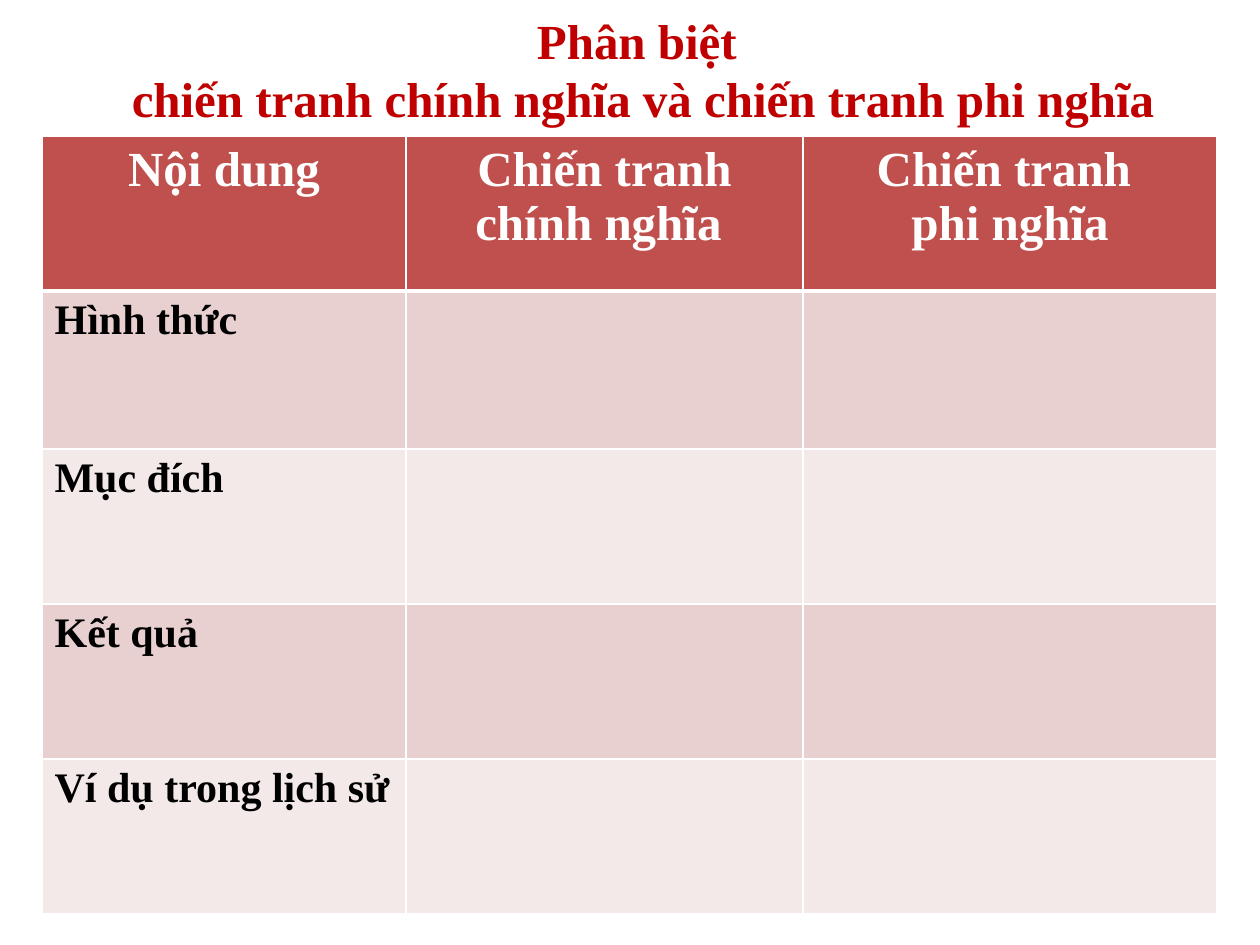
from lxml.etree import SubElement
from pptx import Presentation
from pptx.dml.color import RGBColor
from pptx.enum.text import MSO_ANCHOR, MSO_AUTO_SIZE, PP_ALIGN
from pptx.oxml.ns import qn
from pptx.util import Emu, Pt

COLORS = {
    "title": "C00000",
    "header": "C0504D",
    "odd": "E8D0D0",
    "even": "F4E9E9",
    "white": "FFFFFF",
    "black": "000000",
}
COLUMN_WIDTHS = [364, 397, 414]
ROW_HEIGHTS = [155, 158, 155, 155, 155]
HEADINGS = [["Nội dung"], ["Chiến tranh chính nghĩa "], ["Chiến tranh ", "phi nghĩa"]]
TOPICS = ["Hình thức", "Mục đích", "Kết quả", "Ví dụ trong lịch sử"]


def px(length):
    return Emu(round(length * 914400 / 126))


class SlideBuilder:
    font_name = "Times New Roman"

    def __init__(self, page):
        self.page = page

    def span(self, para, text, size, color):
        span = para.add_run()
        span.text = text
        span.font.name = self.font_name
        span.font.size = Pt(size)
        span.font.bold = True
        span.font.color.rgb = RGBColor.from_string(COLORS[color])

    def title(self, lines, left, top, width, height):
        box = self.page.shapes.title
        box.left, box.top, box.width, box.height = map(px, (left, top, width, height))
        frame = box.text_frame
        frame.auto_size = MSO_AUTO_SIZE.NONE
        frame.word_wrap = True
        frame.vertical_anchor = MSO_ANCHOR.TOP
        frame.margin_top = 0
        para = frame.paragraphs[0]
        para.alignment = PP_ALIGN.CENTER
        for index, line in enumerate(lines):
            if index:
                para.add_line_break()
            self.span(para, line, 28, "title")

    def table(self, left, top, widths, heights):
        frame = self.page.shapes.add_table(
            len(heights), len(widths), px(left), px(top), px(sum(widths)), px(sum(heights))
        )
        table = frame.table
        for column, width in zip(table.columns, widths):
            column.width = px(width)
        for row, height in zip(table.rows, heights):
            row.height = px(height)
        return table

    def cell(self, cell, fill, top_line=1, bottom_line=1):
        properties = cell._tc.get_or_add_tcPr()
        for side, points in zip("LRTB", (1, 1, top_line, bottom_line)):
            line = SubElement(properties, qn(f"a:ln{side}"), w=str(Pt(points)))
            paint = SubElement(line, qn("a:solidFill"))
            SubElement(paint, qn("a:srgbClr"), val=COLORS["white"])
        cell.fill.solid()
        cell.fill.fore_color.rgb = RGBColor.from_string(COLORS[fill])

    def cell_text(self, cell, lines, size, color, alignment):
        frame = cell.text_frame
        for index, line in enumerate(lines):
            para = frame.add_paragraph() if index else frame.paragraphs[0]
            para.alignment = alignment
            self.span(para, line, size, color)


def main():
    deck = Presentation()
    deck.slide_width, deck.slide_height = px(1260), px(945)
    builder = SlideBuilder(deck.slides.add_slide(deck.slide_layouts[5]))
    builder.title(
        ["Phân biệt ", "chiến tranh chính nghĩa và chiến tranh phi nghĩa"], 2, 10, 1282, 157
    )
    table = builder.table(42, 136, COLUMN_WIDTHS, ROW_HEIGHTS)
    for column, lines in enumerate(HEADINGS):
        cell = table.cell(0, column)
        builder.cell(cell, "header", bottom_line=3)
        builder.cell_text(cell, lines, 28, "white", PP_ALIGN.CENTER)
    for row, topic in enumerate(TOPICS, 1):
        for column in range(len(COLUMN_WIDTHS)):
            builder.cell(
                table.cell(row, column), "odd" if row % 2 else "even", top_line=3 if row == 1 else 1
            )
        builder.cell_text(table.cell(row, 0), [topic], 24, "black", PP_ALIGN.LEFT)
    deck.save("out.pptx")


if __name__ == "__main__":
    main()
